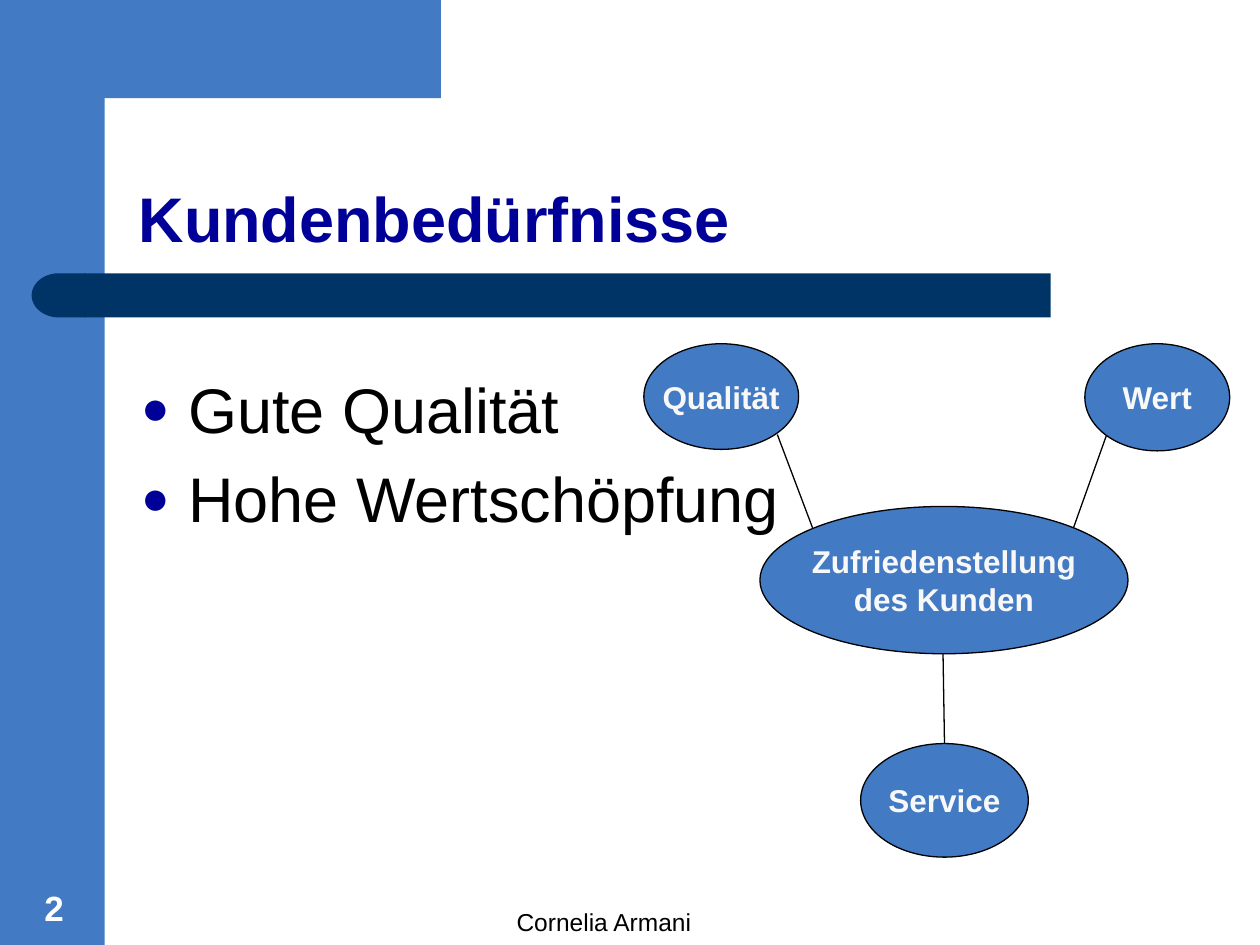
from lxml.etree import SubElement
from pptx import Presentation
from pptx.dml.color import RGBColor
from pptx.enum.shapes import MSO_CONNECTOR, MSO_SHAPE
from pptx.enum.text import MSO_ANCHOR, MSO_AUTO_SIZE, PP_ALIGN
from pptx.oxml.ns import qn
from pptx.util import Cm, Pt

COLORS = {
    "blue": "427AC4",
    "navy": "003366",
    "accent": "000099",
    "black": "000000",
    "white": "FFFFFF",
    "label": "F8F8F8",
}


class SlideBuilder:
    font = "Arial"
    line_width = Pt(0.75)

    def __init__(self, slide):
        self.slide = slide

    def color(self, name):
        return RGBColor.from_string(COLORS[name])

    def place(self, shape, box):
        shape.left, shape.top, shape.width, shape.height = map(Cm, box)

    def fill_text(self, frame, lines, size, color, bold=False,
                  align=PP_ALIGN.LEFT, anchor=MSO_ANCHOR.TOP, wrap=True):
        frame.auto_size = MSO_AUTO_SIZE.NONE
        frame.word_wrap = wrap
        frame.vertical_anchor = anchor
        for index, line in enumerate(lines):
            paragraph = frame.add_paragraph() if index else frame.paragraphs[0]
            paragraph.alignment = align
            run = paragraph.add_run()
            run.text = line
            run.font.name = self.font
            run.font.size = Pt(size)
            run.font.bold = bold
            run.font.color.rgb = self.color(color)

    def title(self, text, box):
        shape = self.slide.shapes.title
        self.place(shape, box)
        self.fill_text(shape.text_frame, [text], 36, "accent", True, anchor=MSO_ANCHOR.BOTTOM)
        shape.text_frame.paragraphs[0].line_spacing = 0.9

    def bullets(self, lines, box):
        shape = self.slide.placeholders[1]
        self.place(shape, box)
        self.fill_text(shape.text_frame, lines, 36, "black")
        for paragraph in shape.text_frame.paragraphs:
            paragraph.space_before = Pt(8)
            properties = paragraph._p.get_or_add_pPr()
            properties.set("marL", str(Cm(0.95)))
            properties.set("indent", str(-Cm(0.95)))
            bullet_color = SubElement(properties, qn("a:buClr"))
            SubElement(bullet_color, qn("a:srgbClr"), val=COLORS["accent"])
            SubElement(properties, qn("a:buSzPct"), val="75000")
            SubElement(properties, qn("a:buFont"), typeface=self.font)
            SubElement(properties, qn("a:buChar"), char="●")

    def text(self, text, box, size, color, bold=False):
        shape = self.slide.shapes.add_textbox(*map(Cm, box))
        self.fill_text(shape.text_frame, [text], size, color, bold,
                       PP_ALIGN.CENTER, MSO_ANCHOR.BOTTOM)

    def block(self, kind, box, color):
        shape = self.slide.shapes.add_shape(kind, *map(Cm, box))
        shape.shadow.inherit = False
        shape.fill.solid()
        shape.fill.fore_color.rgb = self.color(color)
        shape.line.fill.background()
        return shape

    def bubble(self, lines, box):
        shape = self.block(MSO_SHAPE.OVAL, box, "blue")
        shape.line.color.rgb = self.color("black")
        shape.line.width = self.line_width
        self.fill_text(shape.text_frame, lines, 18, "label", True,
                       PP_ALIGN.CENTER, MSO_ANCHOR.MIDDLE, wrap=False)
        return shape

    def line(self, start, end):
        connector = self.slide.shapes.add_connector(
            MSO_CONNECTOR.STRAIGHT, *map(Cm, start + end))
        connector.line.color.rgb = self.color("black")
        connector.line.width = self.line_width
        SubElement(connector._element.spPr, qn("a:effectLst"))
        return connector


def main():
    presentation = Presentation()
    presentation.slide_width = Cm(25.4)
    presentation.slide_height = Cm(19.05)
    slide = presentation.slides.add_slide(presentation.slide_layouts[1])
    builder = SlideBuilder(slide)

    builder.block(MSO_SHAPE.RECTANGLE, (0, 0, 2.11, 19.05), "blue")
    builder.block(MSO_SHAPE.RECTANGLE, (1.9, 0, 6.99, 1.98), "blue")
    bar = builder.block(MSO_SHAPE.ROUNDED_RECTANGLE, (1.7, 5.51, 19.48, 0.89), "navy")
    bar.adjustments[0] = 0
    bar_end = builder.block(MSO_SHAPE.FLOWCHART_DELAY, (0.64, 5.51, 1.09, 0.89), "navy")
    bar_end._element.spPr.get_or_add_xfrm().set("flipH", "1")

    builder.title("Kundenbedürfnisse", (2.54, 2.11, 22.23, 3.18))
    builder.bullets(["Gute Qualität", "Hohe Wertschöpfung"], (2.59, 7.34, 22.23, 10.36))
    builder.text("Cornelia Armani", (8.15, 18.14, 8.05, 0.86), 14, "black")
    builder.text("2", (0, 17.73, 2.18, 1.12), 20, "white", True)

    builder.line((16.38, 10.64), (15.67, 8.76))
    builder.line((21.64, 10.64), (22.3, 8.79))
    builder.bubble(["Zufriedenstellung", "des Kunden"], (15.32, 10.21, 7.42, 2.97))
    builder.bubble(["Qualität"], (12.98, 6.93, 3.12, 2.13))
    builder.bubble(["Wert"], (21.87, 6.93, 2.92, 2.16))
    service = builder.bubble(["Service"], (17.35, 14.99, 3.38, 2.29))
    service_line = builder.line((19.04, 14.99), (19.01, 13.17))
    service_line.begin_connect(service, 0)

    presentation.save("out.pptx")


if __name__ == "__main__":
    main()
